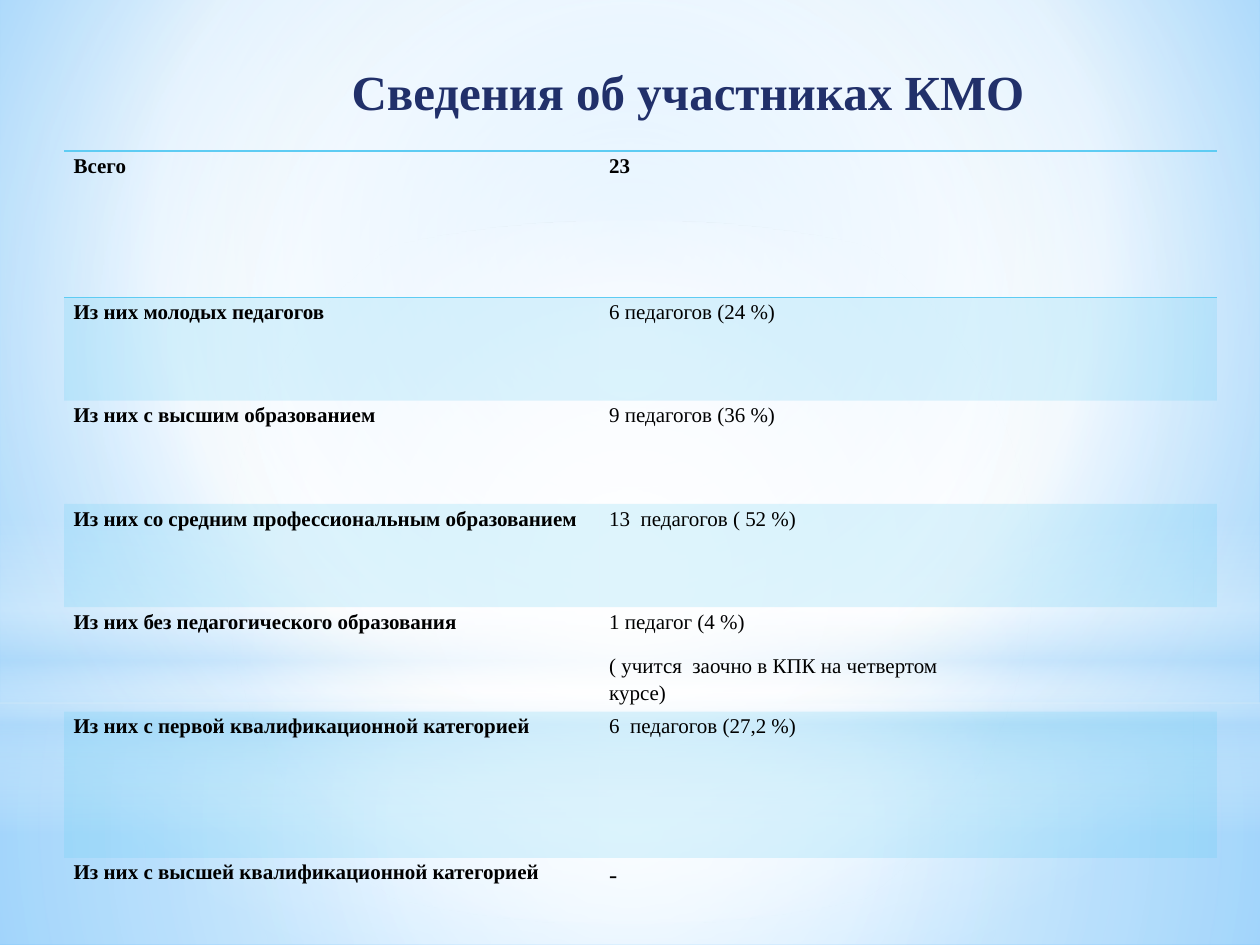
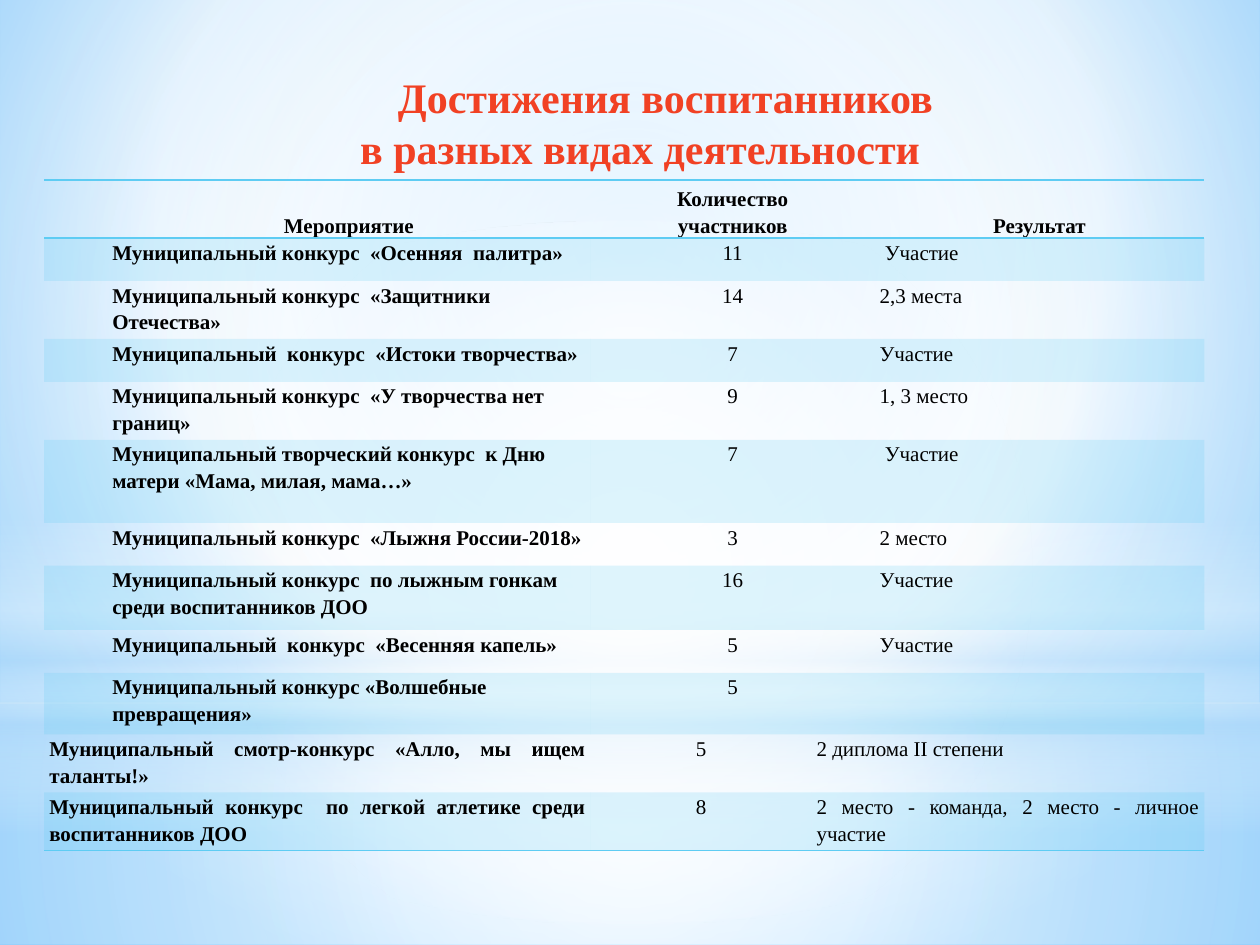
import pptx
import pptx.dml.color
import pptx.enum.shapes
import pptx.enum.text
import pptx.oxml
import pptx.oxml.ns
import pptx.util

Pt = pptx.util.Pt
ALIGN = pptx.enum.text.PP_ALIGN
ANCHOR = pptx.enum.text.MSO_ANCHOR
SHAPE = pptx.enum.shapes.MSO_SHAPE

# Shared style
FONT = "Times New Roman"
COLORS = {
    "text": "000000", "navy": "21306A", "red": "F14124", "cyan": "5ECCF3",
    "white": "FFFFFF", "mist": "B4DCFA", "sky": "9ED5FF", "blue": "5BB9FF",
}
NO_TABLE_STYLE = "{2D5ABB26-0587-4C30-8999-92F81FD0307C}"
CENTER = (50, 50, 50, 50)

# Gradient stops: position, colour, opacity (percent)
BACKGROUND = [(0, "sky", 100), (60, "white", 100), (100, "blue", 100)]
BACKDROP = [
    (SHAPE.RECTANGLE, 401.76, 138.24, CENTER,
     [(0, "white", 91), (37, "white", 76), (100, "mist", 79)]),
    (SHAPE.RECTANGLE, 0, 401.76, CENTER,
     [(0, "white", 89), (48, "white", 62), (100, "mist", 79)]),
    (SHAPE.RECTANGLE, 296.64, 180, None,
     [(0, "white", 0), (29, "white", 30), (45, "mist", 40),
      (55, "white", 26), (65, "mist", 60), (100, "white", 0)]),
    (SHAPE.OVAL, 126, 401.76, CENTER, [(0, "white", 100), (56, "white", 0)]),
]

# Slide 1 content
MEMBERS_TITLE = "Сведения об участниках КМО"
MEMBERS = [
    ("Всего", ["23"]),
    ("Из них молодых педагогов", ["6 педагогов (24 %)"]),
    ("Из них с высшим образованием", ["9 педагогов (36 %)"]),
    ("Из них со средним профессиональным образованием", ["13  педагогов ( 52 %)"]),
    ("Из них без педагогического образования",
     ["1 педагог (4 %)", "( учится  заочно в КПК на четвертом курсе)"]),
    ("Из них с первой квалификационной категорией", ["6  педагогов (27,2 %)"]),
    ("Из них с высшей квалификационной категорией", ["-"]),
]
MEMBERS_COLUMNS = [306, 198.72, 140.4, 12.96]
MEMBERS_ROWS = [83.52, 59.04, 59.04, 59.04, 59.04, 83.52, 50]

# Slide 2 content
AWARDS_TITLE = ["Достижения воспитанников", "в разных видах деятельности"]
AWARDS_HEADER = ["Мероприятие", "Количество участников", "Результат"]
AWARDS = [
    ("Муниципальный конкурс  «Осенняя  палитра»", "11", " Участие"),
    ("Муниципальный конкурс  «Защитники Отечества»", "14", "2,3 места"),
    ("Муниципальный  конкурс  «Истоки творчества»", "7", "Участие"),
    ("Муниципальный конкурс  «У творчества нет границ»", "9", "1, 3 место"),
    ("Муниципальный творческий конкурс  к Дню матери «Мама, милая, мама…»",
     "7", " Участие"),
    ("Муниципальный конкурс  «Лыжня России-2018»", "3", "2 место"),
    ("Муниципальный конкурс  по лыжным гонкам среди воспитанников ДОО",
     "16", "Участие"),
    ("Муниципальный  конкурс  «Весенняя капель»", "5", "Участие"),
    ("Муниципальный конкурс «Волшебные превращения»", "5", ""),
    ("Муниципальный смотр-конкурс «Алло, мы ищем таланты!»",
     "5", "2 диплома II степени"),
    ("Муниципальный конкурс  по легкой атлетике среди воспитанников ДОО",
     "8", "2 место - команда, 2 место - личное участие"),
]
AWARDS_COLUMNS = [312.48, 126, 224.64]
AWARDS_ROWS = [30.96, 24.48, 24.48, 24.48, 24.48, 47.52,
               24.48, 36.72, 24.48, 35.28, 24.48, 24.48]
UNINDENTED_AWARDS = 2  # closing rows set flush and justified


def xml(markup):
    return pptx.oxml.parse_xml(
        markup.replace(" ", f" {pptx.oxml.ns.nsdecls('a')} ", 1))


def fill_gradient(fill, element, query, stops, focus):
    """Fill with a radial gradient around focus, or a vertical one without it."""
    fill.solid()
    fill.fore_color.rgb = pptx.dml.color.RGBColor.from_string(COLORS["white"])
    stop_markup = "".join(
        f'<a:gs pos="{position * 1000}"><a:srgbClr val="{COLORS[color]}">'
        f'<a:alpha val="{opacity * 1000}"/></a:srgbClr></a:gs>'
        for position, color, opacity in stops)
    if focus:
        sides = " ".join(f'{side}="{value * 1000}"' for side, value in zip("ltrb", focus))
        course = f'<a:path path="circle"><a:fillToRect {sides}/></a:path>'
    else:
        course = '<a:lin ang="5400000" scaled="0"/>'
    solid = element.xpath(query)[0]
    solid.getparent().replace(solid, xml(
        f'<a:gradFill rotWithShape="1"><a:gsLst>{stop_markup}</a:gsLst>{course}</a:gradFill>'))


def build_backdrop(presentation, slide):
    """Draw the shared backdrop and move it to the slide master."""
    master = presentation.slide_master
    fill_gradient(master.background.fill, master.element, ".//p:bgPr/a:solidFill",
                  BACKGROUND, (20, 10, 20, 60))
    for number, (kind, top, height, focus, stops) in enumerate(BACKDROP):
        shape = slide.shapes.add_shape(
            kind, 0, Pt(top), presentation.slide_width, Pt(height))
        shape.shadow.inherit = False
        shape.line.fill.background()
        fill_gradient(shape.fill, shape.element, "./p:spPr/a:solidFill", stops, focus)
        shape.element.xpath("./p:nvSpPr/p:cNvPr")[0].set("id", str(100 + number))
        master.shapes.element.append(shape.element)


def write_text(frame, text, size=12, color="text", bold=False, align=ALIGN.LEFT,
               spacing=1.0, after=0, left=0, first=0):
    """Write one paragraph per entry; first indents the opening paragraph."""
    lines = [text] if isinstance(text, str) else text
    for index, line in enumerate(lines):
        paragraph = frame.paragraphs[0] if index == 0 else frame.add_paragraph()
        paragraph.alignment = align
        paragraph.line_spacing = spacing
        paragraph.space_after = Pt(after)
        properties = paragraph._p.get_or_add_pPr()
        properties.set("marL", str(Pt(left)))
        properties.set("indent", str(Pt(first if index == 0 else 0)))
        run = paragraph.add_run()
        run.text = line
        run.font.name = FONT
        run.font.size = Pt(size)
        run.font.bold = bold
        run.font.color.rgb = pptx.dml.color.RGBColor.from_string(COLORS[color])


def add_title(slide, text, box, **text_format):
    frame = slide.shapes.add_textbox(*map(Pt, box)).text_frame
    frame.word_wrap = True
    frame.auto_size = pptx.enum.text.MSO_AUTO_SIZE.SHAPE_TO_FIT_TEXT
    write_text(frame, text, bold=True, align=ALIGN.CENTER, **text_format)


def add_banded_table(slide, left, top, columns, rows, inset, closing_line):
    """Add a table with a ruled header and every second row tinted."""
    graphic = slide.shapes.add_table(len(rows), len(columns), Pt(left), Pt(top),
                                     Pt(sum(columns)), Pt(sum(rows)))
    graphic.element.xpath(".//a:tableStyleId")[0].text = NO_TABLE_STYLE
    table = graphic.table
    table.first_row = table.horz_banding = False
    for column, width in zip(table.columns, columns):
        column.width = Pt(width)
    for index, (row, height) in enumerate(zip(table.rows, rows)):
        row.height = Pt(height)
        edges = ["lnT", "lnB"] if index == 0 else []
        if closing_line and index == len(rows) - 1:
            edges = ["lnB"]
        for cell in row.cells:
            cell.margin_left = cell.margin_right = Pt(inset)
            cell.margin_top = cell.margin_bottom = 0
            for edge in edges:
                cell._tc.get_or_add_tcPr().append(xml(
                    f'<a:{edge} w="{Pt(1)}"><a:solidFill>'
                    f'<a:srgbClr val="{COLORS["cyan"]}"/></a:solidFill></a:{edge}>'))
            if index % 2:
                cell.fill.solid()
                cell.fill.fore_color.rgb = pptx.dml.color.RGBColor.from_string(COLORS["cyan"])
                tint = cell._tc.xpath("./a:tcPr/a:solidFill/a:srgbClr")[0]
                tint.append(xml('<a:alpha val="20000"/>'))
            else:
                cell.fill.background()
    return table


def build_members(slide):
    add_title(slide, MEMBERS_TITLE, (87.84, 31.68, 606.96, 41.04),
              size=28, color="navy", left=3.6)
    table = add_banded_table(slide, 36.72, 86.4, MEMBERS_COLUMNS, MEMBERS_ROWS,
                             inset=5.4, closing_line=False)
    for row, (label, value) in enumerate(MEMBERS):
        write_text(table.cell(row, 0).text_frame, label, bold=True,
                   align=ALIGN.JUSTIFY, spacing=1.15)
        write_text(table.cell(row, 1).text_frame, value, bold=row == 0,
                   size=14 if value == ["-"] else 12, spacing=1.15, after=10)


def build_awards(slide):
    add_title(slide, AWARDS_TITLE, (42.48, 37.44, 646.56, 65.52),
              size=24, color="red", first=29)
    table = add_banded_table(slide, 25.2, 102.96, AWARDS_COLUMNS, AWARDS_ROWS,
                             inset=3, closing_line=True)
    for column, heading in enumerate(AWARDS_HEADER):
        cell = table.cell(0, column)
        cell.vertical_anchor = ANCHOR.BOTTOM
        write_text(cell.text_frame, heading, bold=True, align=ALIGN.CENTER,
                   spacing=1.15, left=36)
    for row, award in enumerate(AWARDS, start=1):
        flush = row > len(AWARDS) - UNINDENTED_AWARDS
        side = ALIGN.JUSTIFY if flush else ALIGN.LEFT
        for column, text in enumerate(award):
            if text:
                write_text(table.cell(row, column).text_frame, text, bold=column == 0,
                           align=ALIGN.CENTER if column == 1 else side,
                           spacing=1.15, left=0 if flush else 36)


def main():
    presentation = pptx.Presentation()
    presentation.slide_width, presentation.slide_height = Pt(720), Pt(540)
    blank = presentation.slide_layouts[6]
    members, awards = (presentation.slides.add_slide(blank) for _ in range(2))
    build_backdrop(presentation, members)
    build_members(members)
    build_awards(awards)
    presentation.save("out.pptx")


if __name__ == "__main__":
    main()
